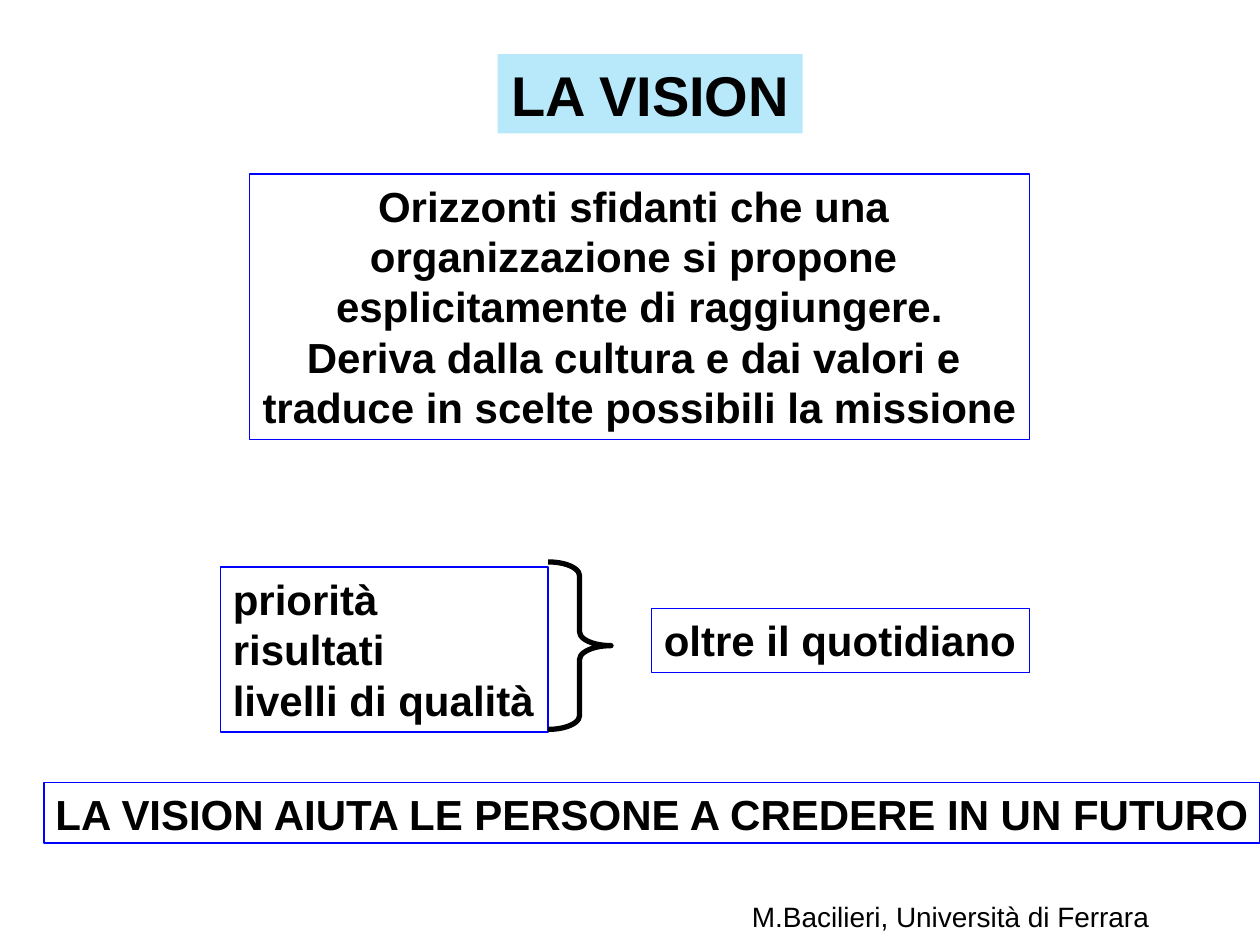
"""Build the slide on what an organisation's vision is."""
from pptx import Presentation
from pptx.dml.color import RGBColor
from pptx.enum.shapes import MSO_SHAPE as Shape
from pptx.enum.text import MSO_ANCHOR as Anchor, MSO_AUTO_SIZE as AutoSize, PP_ALIGN as Align
from pptx.util import Inches, Pt

COLORS = {"text": "000000", "border": "0000FF", "paper": "FFFFFF", "title": "B8E9FA"}
DEFINITION = [
    "Orizzonti sfidanti che una ",
    "organizzazione si propone ",
    "esplicitamente di raggiungere.",
    "Deriva dalla cultura e dai valori e ",
    "traduce in scelte possibili la missione",
]
GOALS = ["priorità", "risultati", "livelli di qualità"]


def color(name):
    """Return the named colour."""
    return RGBColor.from_string(COLORS[name])


def apply_format(target, values):
    """Set each format value on the target."""
    for name, value in values.items():
        setattr(target, name, value)


def paint(shape, fill=None, border=None, width=0.75):
    """Give a shape its fill and border and no shadow."""
    shape.shadow.inherit = False
    if fill:
        shape.fill.solid()
        shape.fill.fore_color.rgb = color(fill)
    else:
        shape.fill.background()
    if border:
        shape.line.color.rgb = color(border)
        shape.line.width = Pt(width)
    else:
        shape.line.fill.background()


def write(shape, lines, align, size=24, bold=True, wrap=False, fit=AutoSize.SHAPE_TO_FIT_TEXT):
    """Write one paragraph for each line of text."""
    frame = shape.text_frame
    apply_format(frame, {"word_wrap": wrap, "auto_size": fit, "vertical_anchor": Anchor.TOP})
    frame.text = "\n".join(lines)
    for paragraph in frame.paragraphs:
        paragraph.alignment = align
        for run in paragraph.runs:
            apply_format(run.font, {"name": "Arial", "size": Pt(size), "bold": bold})
            run.font.color.rgb = color("text")


def add_box(slide, place, lines, align=Align.CENTER, fill="paper", border="border", **text_format):
    """Add a rectangle holding lines of text."""
    box = slide.shapes.add_shape(Shape.RECTANGLE, *map(Inches, place))
    paint(box, fill, border)
    write(box, lines, align, **text_format)


def add_brace(slide, place):
    """Add the brace that gathers the goals."""
    brace = slide.shapes.add_shape(Shape.RIGHT_BRACE, *map(Inches, place))
    brace.adjustments[0] = 0.22
    paint(brace, border="text", width=3)


def add_credit(slide, place, text):
    """Add the author line."""
    credit = slide.shapes.add_textbox(*map(Inches, place))
    write(credit, [text], Align.LEFT, size=16, bold=False, wrap=True)


def main():
    """Build and save the slide."""
    deck = Presentation()
    apply_format(deck, {"slide_width": Inches(10), "slide_height": Inches(7.5)})
    slide = deck.slides.add_slide(deck.slide_layouts[6])
    add_box(slide, (1.98, 1.38, 6.19, 2.11), DEFINITION)
    add_box(slide, (3.95, 0.43, 2.42, 0.63), ["LA VISION"], fill="title", border=None, size=32)
    add_box(slide, (1.75, 4.5, 2.6, 1.31), GOALS, align=Align.LEFT)
    add_brace(slide, (4.35, 4.46, 0.5, 1.33))
    add_box(slide, (5.17, 4.83, 3, 0.51), ["oltre il quotidiano"], align=Align.LEFT, fill=None)
    add_box(slide, (0.35, 6.21, 9.65, 0.48),
            ["LA VISION AIUTA LE PERSONE A CREDERE IN UN FUTURO"], fit=AutoSize.NONE)
    add_credit(slide, (5.87, 7.09, 4.13, 0.37), "M.Bacilieri, Università di Ferrara")
    deck.save("out.pptx")


if __name__ == "__main__":
    main()
